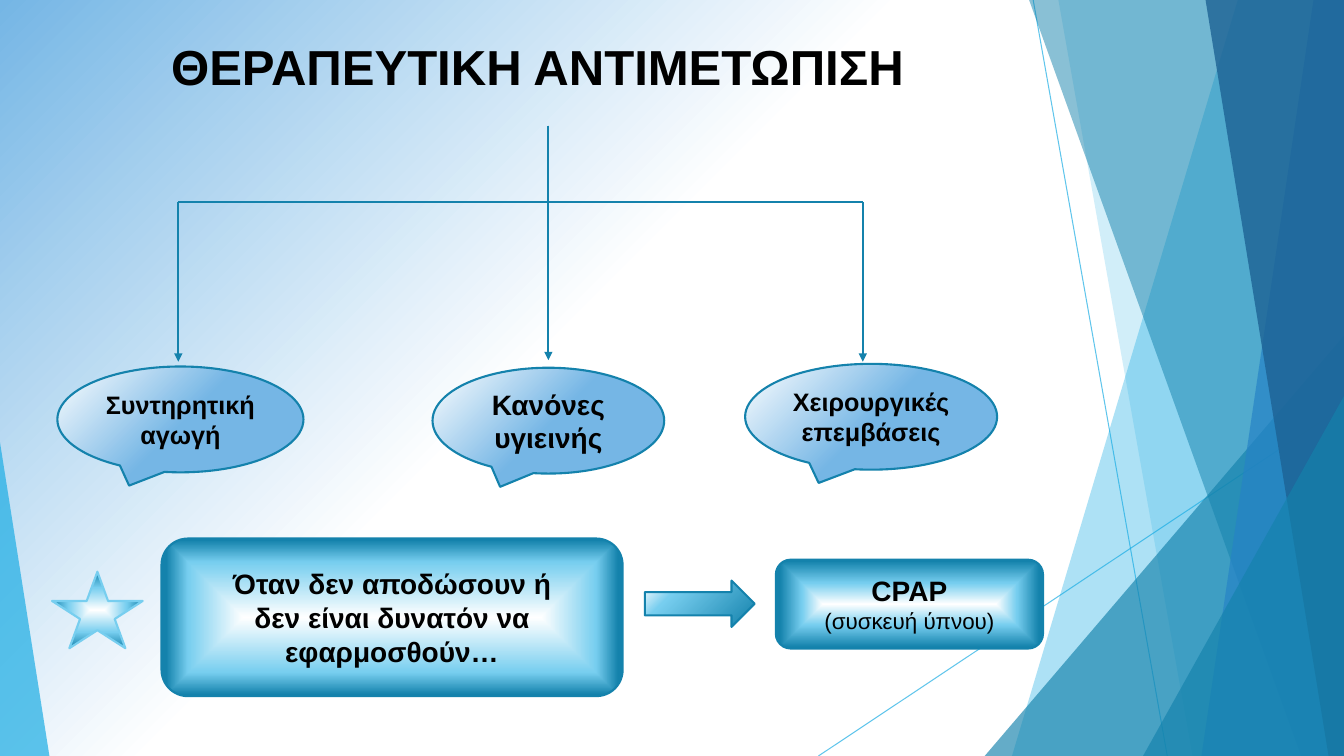
from lxml import etree
from pptx import Presentation
from pptx.dml.color import RGBColor
from pptx.enum.shapes import MSO_CONNECTOR, MSO_SHAPE, MSO_SHAPE_TYPE
from pptx.enum.text import MSO_ANCHOR, PP_ALIGN
from pptx.oxml.ns import qn
from pptx.util import Pt

STRAIGHT, ELBOW = MSO_CONNECTOR.STRAIGHT, MSO_CONNECTOR.ELBOW
TRIANGLE, ROUNDED = MSO_SHAPE.ISOSCELES_TRIANGLE, MSO_SHAPE.ROUNDED_RECTANGLE
CALLOUT, STAR, ARROW = MSO_SHAPE.OVAL_CALLOUT, MSO_SHAPE.STAR_5_POINT, MSO_SHAPE.RIGHT_ARROW
CENTER, LEFT = PP_ALIGN.CENTER, PP_ALIGN.LEFT
MIDDLE, TOP = MSO_ANCHOR.MIDDLE, MSO_ANCHOR.TOP

WIDTH, HEIGHT = 960, 540
COLORS = {
    "white": "FFFFFF", "black": "000000", "sky": "75B6E5", "aqua": "77CEEF",
    "cyan": "1CADE4", "teal": "1482AC", "blue": "2683C6", "navy": "1D6294",
}
RGB = {name: RGBColor.from_string(value) for name, value in COLORS.items()}


def write(box, text, size=20, bold=True, align=CENTER, anchor=MIDDLE):
    """Fill a shape with text, one paragraph for each line."""
    frame = box.text_frame
    frame.word_wrap = True
    frame.vertical_anchor = anchor
    frame.text = text
    for para in frame.paragraphs:
        para.alignment = align
        font = para.runs[0].font
        font.name, font.size, font.bold = "Arial", Pt(size), bold
        font.color.rgb = RGB["black"]


def set_gradient(owner, fill, stops, focus=None, path="shape"):
    """Linear gradient at 45 degrees, or a path gradient around a focus."""
    fill.gradient()
    gradient = next(owner.element.iter(qn("a:gradFill")))
    for child in list(gradient):
        gradient.remove(child)
    stop_list = etree.SubElement(gradient, qn("a:gsLst"))
    for position, color in stops:
        stop = etree.SubElement(stop_list, qn("a:gs"), pos=str(position * 1000))
        etree.SubElement(stop, qn("a:srgbClr"), val=COLORS[color])
    if focus:
        area = etree.SubElement(gradient, qn("a:path"), path=path)
        sides = {side: str(share * 1000) for side, share in zip("ltrb", focus)}
        etree.SubElement(area, qn("a:fillToRect"), **sides)
    else:
        etree.SubElement(gradient, qn("a:lin"), ang="2700000", scaled="0")


deck = Presentation()
deck.slide_width, deck.slide_height = Pt(WIDTH), Pt(HEIGHT)
page = deck.slides.add_slide(deck.slide_layouts[6])
shapes = page.shapes

# Background
set_gradient(page, page.background.fill, [(57, "white"), (100, "sky")],
             focus=(100, 100, 0, 0), path="circle")

# Thin decorative lines
translucent = []
for ends in [(738, 0, 833.8, HEIGHT), (WIDTH, 290.2, 584.6, HEIGHT)]:
    line = shapes.add_connector(STRAIGHT, *map(Pt, ends))
    line.line.color.rgb = RGB["cyan"]
    line.line.width = Pt(0.75)
    translucent.append((line, 70))

# Shards: a band to the right edge (top x, bottom x),
# or a triangle (left, top, width, height, apex)
shards = [
    ((884.2, 722.9), "cyan", 36),
    ((756, 851.8), "cyan", 20),
    ((703.4, 239.8, 256.6, 300.2, 1), "teal", 66),
    ((735.1, 929.5), "teal", 50),
    ((938.2, 858.2), "blue", 70),
    ((861.1, 949), "navy", 80),
    ((816.5, 283, 143.5, 257, 1), "teal", 66),
    ((0, 316, 35.3, 224, 0), "cyan", 70),
]
for geometry, color, opacity in shards:
    if len(geometry) == 2:
        top_x, bottom_x = geometry
        outline = shapes.build_freeform(Pt(top_x), 0)
        corners = [(WIDTH, 0), (WIDTH, HEIGHT), (bottom_x, HEIGHT)]
        outline.add_line_segments([(Pt(x), Pt(y)) for x, y in corners])
        shard = outline.convert_to_shape()
    else:
        *frame, apex = geometry
        shard = shapes.add_shape(TRIANGLE, *map(Pt, frame))
        shard.adjustments[0] = apex
    shard.fill.solid()
    shard.fill.fore_color.rgb = RGB[color]
    shard.line.fill.background()
    translucent.append((shard, opacity))

for shape, opacity in translucent:
    color_node = next(shape.element.iter(qn("a:srgbClr")))
    etree.SubElement(color_node, qn("a:alpha"), val=str(opacity * 1000))

# Title
title = shapes.add_textbox(Pt(115.2), Pt(22.3), Pt(552.2), Pt(67.7))
write(title, "ΘΕΡΑΠΕΥΤΙΚΗ ΑΝΤΙΜΕΤΩΠΙΣΗ", size=35.1, align=LEFT, anchor=TOP)

# Tree: elbows turn from the stem to each side
STEM_X, STEM_TOP, BAR_Y = 391.7, 89.8, 144.3
LEFT_X, RIGHT_X = 127.4, 616.3
drop = BAR_Y - STEM_TOP
for side_x, turn in [(LEFT_X, 90), (RIGHT_X, 270)]:
    middle_x, middle_y = (STEM_X + side_x) / 2, (STEM_TOP + BAR_Y) / 2
    half_span = abs(side_x - STEM_X) / 2
    half_drop = drop / 2 if side_x < STEM_X else -drop / 2
    elbow = shapes.add_connector(
        ELBOW, Pt(middle_x - half_drop), Pt(middle_y - half_span),
        Pt(middle_x + half_drop), Pt(middle_y + half_span))
    elbow.element.spPr.find(qn("a:xfrm")).set("rot", str(turn * 60000))
    elbow.element.spPr.find(qn("a:prstGeom")).set("prst", "bentConnector2")
    elbow.line.color.rgb = RGB["teal"]
    elbow.line.width = Pt(1.25)

for x, top, bottom in [(STEM_X, 141, 257.3), (RIGHT_X, 144.6, 258.4),
                       (LEFT_X, 144.6, 258.4)]:
    branch = shapes.add_connector(STRAIGHT, Pt(x), Pt(top), Pt(x), Pt(bottom))
    branch.line.color.rgb = RGB["teal"]
    branch.line.width = Pt(1.25)
    etree.SubElement(branch.line._get_or_add_ln(), qn("a:tailEnd"), type="triangle")

# Callouts, boxes, star and arrow
CALLOUT_STOPS = [(0, "white"), (52, "sky")]
CENTRED = (50, 50, 50, 50)
figures = [
    (CALLOUT, (41, 261.8, 175.8, 75.6), CALLOUT_STOPS, None, "teal",
     "Συντηρητική αγωγή", 18),
    (CALLOUT, (309, 262.7, 165.5, 75.6), CALLOUT_STOPS, None, "teal",
     "Κανόνες υγιεινής", 20),
    (CALLOUT, (532.3, 259.9, 180, 75.6), CALLOUT_STOPS, None, "teal",
     "Χειρουργικές επεμβάσεις", 18),
    (ROUNDED, (115.4, 384.7, 329.4, 112.6),
     [(0, "white"), (70, "aqua"), (98, "teal")], CENTRED, "teal",
     "Όταν δεν αποδώσουν ή\nδεν είναι δυνατόν να εφαρμοσθούν…", 20),
    (STAR, (37.2, 408.4, 64.8, 54.7),
     [(0, "white"), (58, "aqua"), (100, "teal")], CENTRED, "aqua", "", 0),
    (ARROW, (460.6, 414.7, 78.5, 33.1),
     [(2, "white"), (26, "aqua"), (100, "teal")], None, "teal", "", 0),
    (ROUNDED, (554.2, 399.8, 190.8, 63.4),
     [(0, "white"), (47, "aqua"), (97, "teal")], CENTRED, "teal",
     "CPAP\n(συσκευή ύπνου)", 20),
]
for kind, frame, stops, focus, edge, text, size in figures:
    figure = shapes.add_shape(kind, *map(Pt, frame))
    set_gradient(figure, figure.fill, stops, focus)
    figure.line.color.rgb = RGB[edge]
    figure.line.width = Pt(1.5)
    if text:
        write(figure, text, size)

# The last box has a lighter second line
device = figure.text_frame.paragraphs[1].runs[0].font
device.size, device.bold = Pt(16), False

# No shadows
for shape in shapes:
    if shape.shape_type == MSO_SHAPE_TYPE.LINE or shape.element.tag == qn("p:cxnSp"):
        etree.SubElement(shape.element.spPr, qn("a:effectLst"))
    else:
        shape.shadow.inherit = False

deck.save("out.pptx")
